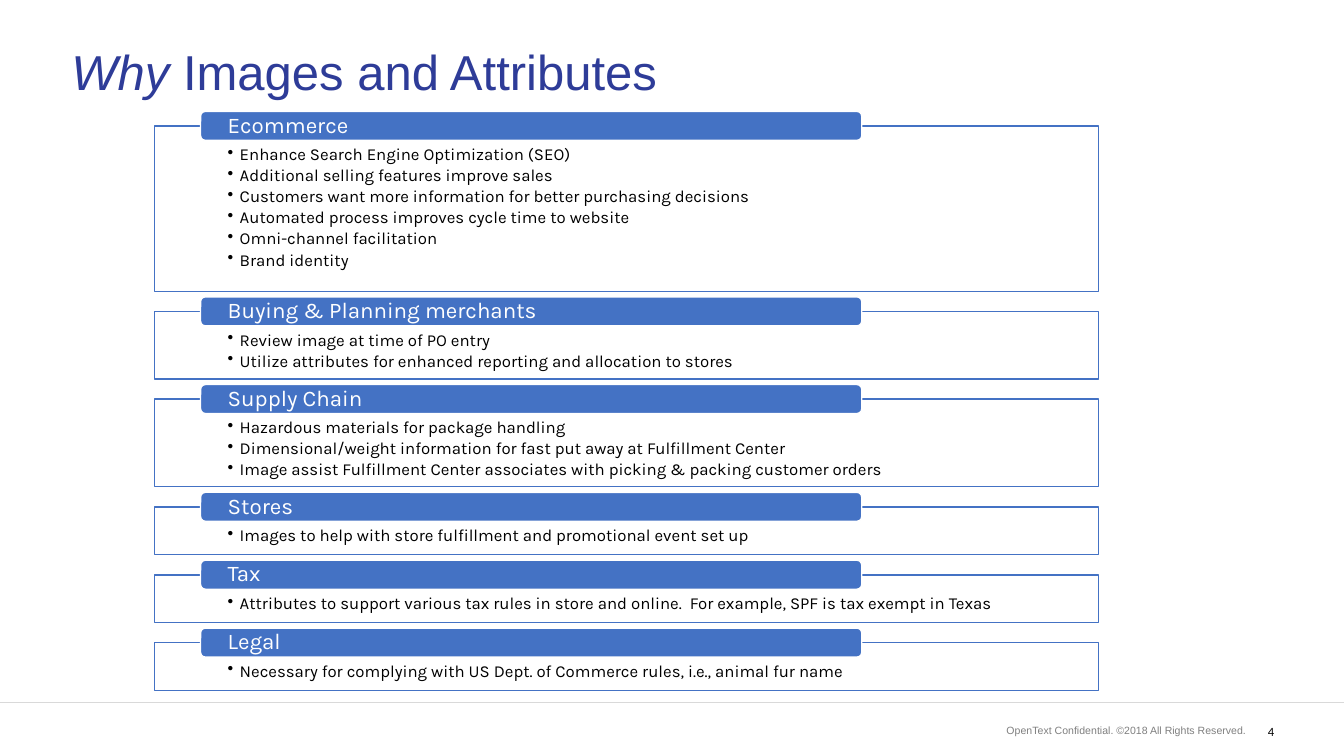
from dataclasses import dataclass

from lxml import etree
from pptx import Presentation
from pptx.dml.color import RGBColor
from pptx.enum.shapes import MSO_CONNECTOR, MSO_SHAPE
from pptx.enum.text import MSO_ANCHOR, PP_ALIGN
from pptx.oxml.ns import qn
from pptx.util import Pt

RECTANGLE, ROUNDED = MSO_SHAPE.RECTANGLE, MSO_SHAPE.ROUNDED_RECTANGLE
STRAIGHT = MSO_CONNECTOR.STRAIGHT
TOP, MIDDLE = MSO_ANCHOR.TOP, MSO_ANCHOR.MIDDLE
LEFT, RIGHT = PP_ALIGN.LEFT, PP_ALIGN.RIGHT

BLUE, NAVY, WHITE, BLACK = "4472C4", "2E3C98", "FFFFFF", "000000"
GREY, RULE_GREY = "7F7F7F", "D9D9D9"

# Lengths in points
SLIDE_W, SLIDE_H = 960, 540
FRAME_LEFT, FRAME_TOP, FRAME_W = 110.2, 90, 674.6
FRAME_GAP = 14.4
BAR_LEFT, BAR_W, BAR_H, BAR_RISE = 143.3, 472.3, 20.7, 10.4
BULLET_INDENT = 8.64
RULE_Y = 501.8


@dataclass
class Section:
    heading: str
    frame_height: float
    bullets: list[str]


@dataclass
class TextStyle:
    font: str
    size: float
    colour: str
    align: int = LEFT
    line_spacing: object = 1.0
    space_after: float = 0
    bullet: bool = False


SECTIONS = [
    Section("Ecommerce", 118.1, [
        "Enhance Search Engine Optimization (SEO)",
        "Additional selling features improve sales",
        "Customers want more information for better purchasing decisions",
        "Automated process improves cycle time to website",
        "Omni-channel facilitation",
        "Brand identity",
    ]),
    Section("Buying & Planning merchants", 48.2, [
        "Review image at time of PO entry",
        "Utilize attributes for enhanced reporting and allocation to stores",
    ]),
    Section("Supply Chain", 62.6, [
        "Hazardous materials for package handling",
        "Dimensional/weight information for fast put away at Fulfillment Center",
        "Image assist Fulfillment Center associates with picking & packing customer orders",
    ]),
    Section("Stores", 34.1, [
        "Images to help with store fulfillment and promotional event set up",
    ]),
    Section("Tax", 34.1, [
        "Attributes to support various tax rules in store and online.  "
        "For example, SPF is tax exempt in Texas",
    ]),
    Section("Legal", 34.1, [
        "Necessary for complying with US Dept. of Commerce rules, i.e., animal fur name",
    ]),
]

TITLE = TextStyle("Arial", 35, NAVY, line_spacing=Pt(40))
HEADING = TextStyle("Karla", 16, WHITE, line_spacing=0.9)
BULLET = TextStyle("Karla", 12, BLACK, line_spacing=0.9, space_after=2.1, bullet=True)
FOOTER = TextStyle("Arial", 7.5, GREY, align=RIGHT)
PAGE_NUMBER = TextStyle("Calibri", 9, BLACK, align=RIGHT)


def colour(value: str) -> RGBColor:
    return RGBColor.from_string(value)


def set_values(target, values: dict) -> None:
    for name, value in values.items():
        setattr(target, name, value)


def add_bullet(para) -> None:
    props = para._p.get_or_add_pPr()
    props.set("marL", str(Pt(BULLET_INDENT)))
    props.set("indent", str(-Pt(BULLET_INDENT)))
    etree.SubElement(props, qn("a:buChar")).set("char", "•")


def write(shape, paragraphs: list, style: TextStyle, insets: tuple, anchor: int) -> None:
    """Each paragraph is a list of (text, italic) spans."""
    frame = shape.text_frame
    left, top, right, bottom = map(Pt, insets)
    set_values(frame, {
        "word_wrap": True, "vertical_anchor": anchor, "margin_left": left,
        "margin_top": top, "margin_right": right, "margin_bottom": bottom,
    })
    for index, spans in enumerate(paragraphs):
        para = frame.add_paragraph() if index else frame.paragraphs[0]
        if style.bullet:
            add_bullet(para)
        set_values(para, {
            "alignment": style.align, "line_spacing": style.line_spacing,
            "space_before": Pt(0), "space_after": Pt(style.space_after),
        })
        for text, italic in spans:
            span = para.add_run()
            span.text = text
            set_values(span.font, {
                "name": style.font, "size": Pt(style.size), "italic": italic,
            })
            span.font.color.rgb = colour(style.colour)


def add_panel(page, kind: int, bounds: tuple, fill: str, line: str):
    shape = page.shapes.add_shape(kind, *map(Pt, bounds))
    shape.shadow.inherit = False
    shape.fill.solid()
    shape.fill.fore_color.rgb = colour(fill)
    shape.line.color.rgb = colour(line)
    shape.line.width = Pt(1)
    return shape


def add_label(page, bounds: tuple, spans: list, style: TextStyle,
              insets: tuple, anchor: int) -> None:
    box = page.shapes.add_textbox(*map(Pt, bounds))
    write(box, [spans], style, insets, anchor)


def add_section(page, section: Section, top: float) -> None:
    # Outlined frame with its bullets
    frame = add_panel(page, RECTANGLE, (FRAME_LEFT, top, FRAME_W, section.frame_height),
                      WHITE, BLUE)
    solid = frame.fill._xPr.find(qn("a:solidFill"))
    etree.SubElement(solid[0], qn("a:alpha")).set("val", "90000")
    write(frame, [[(text, False)] for text in section.bullets], BULLET,
          (52.4, 14.4, 52.4, 6.5), TOP)
    # Heading bar across the frame's top edge
    bar = add_panel(page, ROUNDED, (BAR_LEFT, top - BAR_RISE, BAR_W, BAR_H), BLUE, WHITE)
    write(bar, [[(section.heading, False)]], HEADING, (18.4, 0, 18.4, 0), MIDDLE)


def add_rule(page) -> None:
    rule = page.shapes.add_connector(STRAIGHT, Pt(0), Pt(RULE_Y), Pt(SLIDE_W), Pt(RULE_Y))
    rule.line.color.rgb = colour(RULE_GREY)
    rule.line.width = Pt(1)
    etree.SubElement(rule._element.spPr, qn("a:effectLst"))


def main() -> None:
    deck = Presentation()
    deck.slide_width, deck.slide_height = Pt(SLIDE_W), Pt(SLIDE_H)
    page = deck.slides.add_slide(deck.slide_layouts[6])

    # Footer
    small_insets = (3.6, 2.2, 3.6, 2.2)
    add_label(page, (700.6, 514.8, 193, 13), [
        ("OpenText Confidential. ©2018 All Rights Reserved.", False),
    ], FOOTER, small_insets, MIDDLE)
    add_label(page, (888.5, 514.8, 25.2, 14.4), [("4", False)],
              PAGE_NUMBER, small_insets, TOP)
    add_rule(page)

    # Title
    add_label(page, (43.9, 13.7, 866.9, 76.3),
              [("Why", True), (" Images and Attributes", False)],
              TITLE, (7.2, 3.6, 7.2, 3.6), MIDDLE)

    # Sections, stacked with equal gaps
    top = FRAME_TOP
    for section in SECTIONS:
        add_section(page, section, top)
        top += section.frame_height + FRAME_GAP

    deck.save("out.pptx")


if __name__ == "__main__":
    main()
